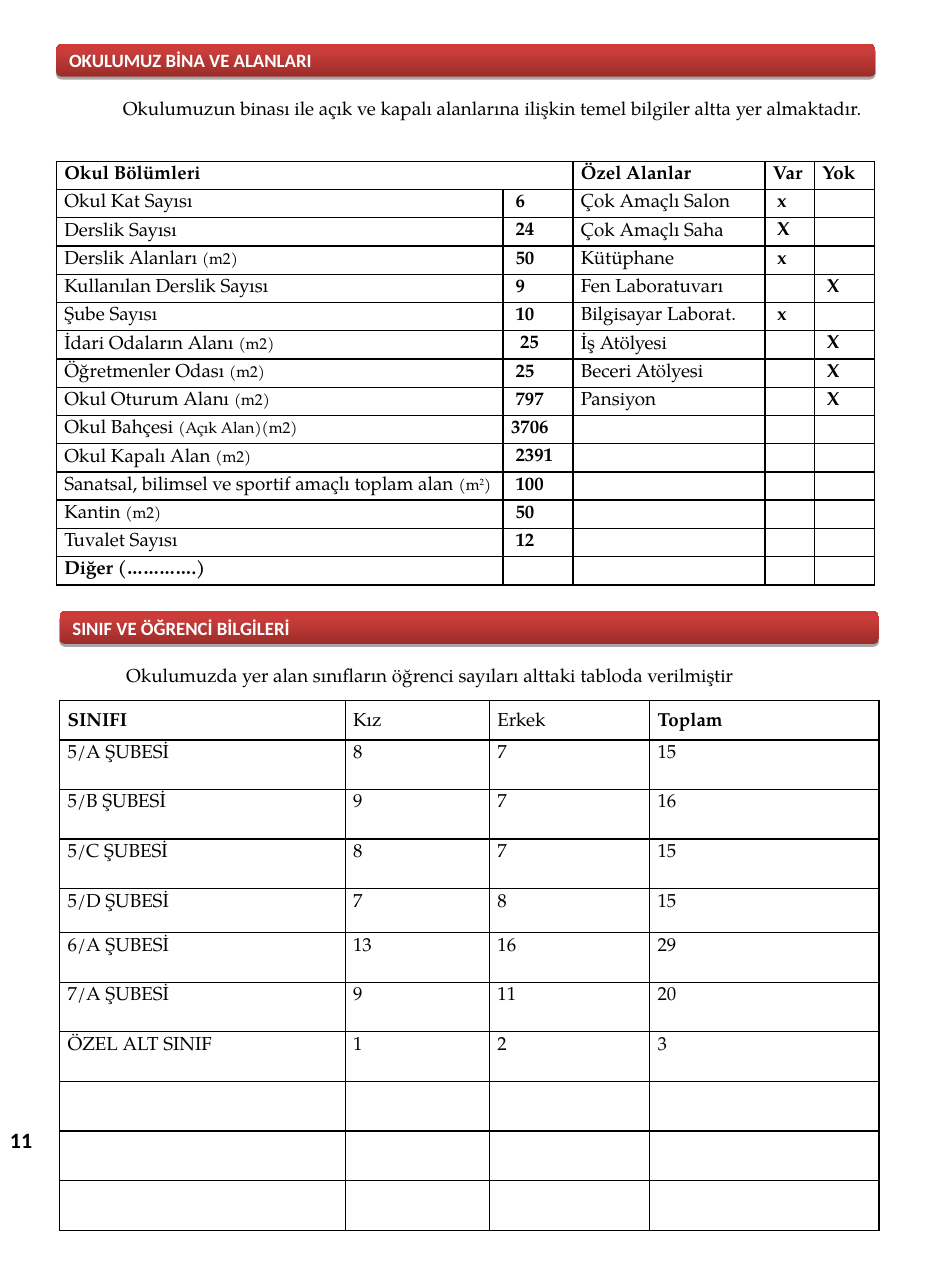
from dataclasses import dataclass
from typing import NamedTuple

from lxml import etree
from pptx import Presentation
from pptx.dml.color import RGBColor
from pptx.enum.shapes import MSO_SHAPE
from pptx.enum.text import MSO_ANCHOR, MSO_AUTO_SIZE, PP_ALIGN
from pptx.oxml import parse_xml
from pptx.oxml.ns import nsdecls, qn
from pptx.slide import Slide
from pptx.table import _Cell
from pptx.text.text import TextFrame, _Paragraph
from pptx.util import Inches, Pt

BLACK = RGBColor(0x00, 0x00, 0x00)
WHITE = RGBColor(0xFF, 0xFF, 0xFF)
BAR_STOPS = (
    (0, RGBColor(0x9B, 0x2D, 0x2A)),
    (80, RGBColor(0xCB, 0x3D, 0x3A)),
    (100, RGBColor(0xCE, 0x3B, 0x37)),
)
SERIF = "TeX Gyre Pagella"
SANS = "Calibri"
JUSTIFY, LEFT = PP_ALIGN.JUSTIFY, PP_ALIGN.LEFT
MIDDLE, TOP = MSO_ANCHOR.MIDDLE, MSO_ANCHOR.TOP
GROW = MSO_AUTO_SIZE.SHAPE_TO_FIT_TEXT
ROUNDED = MSO_SHAPE.ROUNDED_RECTANGLE

CONTENT_WIDTH = 7.26
CELL_INSET = 0.07
VALUE_INDENT = 0.04
LINE_SPACING = 1.25


class Piece(NamedTuple):
    text: str
    size: float = 12
    bold: bool = False
    font: str = SERIF
    color: RGBColor = BLACK
    raised: bool = False


@dataclass(frozen=True)
class Entry:
    """Content of one table cell."""
    pieces: tuple[Piece, ...] = ()
    indent: float = 0
    anchor: MSO_ANCHOR = TOP


@dataclass(frozen=True)
class Grid:
    left: float
    top: float
    columns: tuple[float, ...]
    rows: tuple[float, ...]
    entries: list[list[Entry]]
    right_border: float = 1


@dataclass(frozen=True)
class Section:
    left: float
    bar_top: float
    title: str
    intro_top: float
    intro_height: float
    intro: str


EMPTY = Entry()
SQUARE_METRES = (Piece("(m2)", 10),)
RAISED_METRES = (Piece("(m", 10), Piece("2", 10, raised=True), Piece(")", 10))

SECTIONS = (
    Section(0.5, 0.39, "OKULUMUZ BİNA VE ALANLARI", 0.76, 0.59,
            "Okulumuzun binası ile açık ve kapalı alanlarına ilişkin temel bilgiler altta yer almaktadır."),
    Section(0.53, 5.42, "SINIF VE ÖĞRENCİ BİLGİLERİ", 5.79, 0.34,
            "Okulumuzda yer alan sınıfların öğrenci sayıları alttaki tabloda verilmiştir"),
)

# Part of the school, unit, value, value indent
SCHOOL_PARTS = (
    ("Okul Kat Sayısı", (), "6", VALUE_INDENT),
    ("Derslik Sayısı", (), "24", VALUE_INDENT),
    ("Derslik Alanları ", SQUARE_METRES, "50", VALUE_INDENT),
    ("Kullanılan Derslik Sayısı", (), "9", VALUE_INDENT),
    ("Şube Sayısı", (), "10", VALUE_INDENT),
    ("İdari Odaların Alanı ", SQUARE_METRES, "25", 2 * VALUE_INDENT),
    ("Öğretmenler Odası ", SQUARE_METRES, "25", VALUE_INDENT),
    ("Okul Oturum Alanı ", SQUARE_METRES, "797", VALUE_INDENT),
    ("Okul Bahçesi ", (Piece("(Açık Alan)(m2)", 10),), "3706", 0),
    ("Okul Kapalı Alan ", SQUARE_METRES, "2391", VALUE_INDENT),
    ("Sanatsal, bilimsel ve sportif amaçlı toplam alan ", RAISED_METRES, "100", VALUE_INDENT),
    ("Kantin ", SQUARE_METRES, "50", VALUE_INDENT),
    ("Tuvalet Sayısı", (), "12", VALUE_INDENT),
)
# Special area, mark under "Var", mark under "Yok"
SPECIAL_AREAS = (
    ("Çok Amaçlı Salon", "x", ""),
    ("Çok Amaçlı Saha", "X", ""),
    ("Kütüphane", "x", ""),
    ("Fen Laboratuvarı", "", "X"),
    ("Bilgisayar Laborat.", "x", ""),
    ("İş Atölyesi", "", "X"),
    ("Beceri Atölyesi", "", "X"),
    ("Pansiyon", "", "X"),
)
# Class, girls, boys, total
CLASSES = (
    ("5/A ŞUBESİ", "8", "7", "15"),
    ("5/B ŞUBESİ", "9", "7", "16"),
    ("5/C ŞUBESİ", "8", "7", "15"),
    ("5/D ŞUBESİ", "7", "8", "15"),
    ("6/A ŞUBESİ", "13", "16", "29"),
    ("7/A ŞUBESİ", "9", "11", "20"),
    ("ÖZEL ALT SINIF", "1", "2", "3"),
)
SPARE_CLASS_ROWS = 3


def plain(text: str) -> Entry:
    return Entry((Piece(text),))


def strong(text: str, indent: float = 0) -> Entry:
    return Entry((Piece(text, bold=True),), indent) if text else EMPTY


def building_entries() -> list[list[Entry]]:
    rows = [[strong("Okul Bölümleri"), EMPTY, strong("Özel Alanlar"), strong("Var"), strong("Yok")]]
    for index, (part, unit, value, indent) in enumerate(SCHOOL_PARTS):
        row = [Entry((Piece(part), *unit)), strong(value, indent)]
        if index < len(SPECIAL_AREAS):
            area, present, absent = SPECIAL_AREAS[index]
            row += [plain(area), strong(present, VALUE_INDENT), strong(absent, VALUE_INDENT)]
        else:
            row += [EMPTY] * 3
        rows.append(row)
    return rows + [[strong("Diğer (………….)")] + [EMPTY] * 4]


def class_entries() -> list[list[Entry]]:
    headings = [Entry((Piece(text, bold=bold),), anchor=MIDDLE) for text, bold in
                (("SINIFI", True), ("Kız", False), ("Erkek", False), ("Toplam", True))]
    counts = [[plain(text) for text in row] for row in CLASSES]
    return [headings] + counts + [[EMPTY] * 4] * SPARE_CLASS_ROWS


def add_pieces(paragraph: _Paragraph, pieces: tuple[Piece, ...]) -> None:
    for piece in pieces:
        run = paragraph.add_run()
        run.text = piece.text
        run.font.size = Pt(piece.size)
        run.font.bold = piece.bold
        run.font.name = piece.font
        run.font.color.rgb = piece.color
        if piece.raised:
            run.font._element.set("baseline", "30000")


def add_text(slide: Slide, left: float, top: float, width: float, height: float, piece: Piece) -> TextFrame:
    frame = slide.shapes.add_textbox(Inches(left), Inches(top), Inches(width), Inches(height)).text_frame
    frame.word_wrap = True
    frame.auto_size = GROW
    add_pieces(frame.paragraphs[0], (piece,))
    return frame


def add_section(slide: Slide, section: Section) -> None:
    bar = slide.shapes.add_shape(ROUNDED, Inches(section.left), Inches(section.bar_top),
                                 Inches(CONTENT_WIDTH), Inches(0.29))
    bar.line.fill.background()
    stops = "".join(f'<a:gs pos="{pos * 1000}"><a:srgbClr val="{color}"/></a:gs>' for pos, color in BAR_STOPS)
    bar.fill.background()
    properties = bar._element.spPr
    properties.replace(properties.find(qn("a:noFill")), parse_xml(
        f'<a:gradFill {nsdecls("a")} rotWithShape="1"><a:gsLst>{stops}</a:gsLst>'
        '<a:lin ang="16200000" scaled="0"/></a:gradFill>'))
    properties.append(parse_xml(
        f'<a:effectLst {nsdecls("a")}><a:outerShdw blurRad="0" dist="{Pt(1.8)}" dir="5400000" rotWithShape="0">'
        f'<a:srgbClr val="{BLACK}"><a:alpha val="35000"/></a:srgbClr></a:outerShdw></a:effectLst>'))
    bar.text_frame.vertical_anchor = MIDDLE
    title = bar.text_frame.paragraphs[0]
    title.alignment = LEFT
    add_pieces(title, (Piece(section.title, bold=True, font=SANS, color=WHITE),))

    intro = add_text(slide, section.left, section.intro_top, CONTENT_WIDTH, section.intro_height,
                     Piece(section.intro)).paragraphs[0]
    intro.alignment = JUSTIFY
    intro.line_spacing = LINE_SPACING
    intro._p.get_or_add_pPr().set("indent", str(Inches(0.49)))


def fill_cell(cell: _Cell, entry: Entry, right_border: float) -> None:
    cell.margin_left = Inches(CELL_INSET + entry.indent)
    cell.margin_right = Inches(CELL_INSET)
    cell.margin_top = cell.margin_bottom = 0
    cell.vertical_anchor = entry.anchor
    for side, width in (("L", 1), ("R", right_border), ("T", 1), ("B", 1)):
        cell._tc.get_or_add_tcPr().append(parse_xml(
            f'<a:ln{side} {nsdecls("a")} w="{Pt(width)}"><a:solidFill><a:srgbClr val="{BLACK}"/>'
            f'</a:solidFill></a:ln{side}>'))
    cell.fill.background()
    paragraph = cell.text_frame.paragraphs[0]
    paragraph.alignment = JUSTIFY
    paragraph.line_spacing = LINE_SPACING
    add_pieces(paragraph, entry.pieces)
    if not entry.pieces:
        etree.SubElement(paragraph._p, qn("a:endParaRPr"), sz="1000")


def add_grid(slide: Slide, grid: Grid) -> None:
    table = slide.shapes.add_table(len(grid.rows), len(grid.columns), Inches(grid.left), Inches(grid.top),
                                   Inches(sum(grid.columns)), Inches(sum(grid.rows))).table
    table.first_row = table.horz_banding = False
    for column, width in zip(table.columns, grid.columns):
        column.width = Inches(width)
    for row, height, entries in zip(table.rows, grid.rows, grid.entries):
        row.height = Inches(height)
        for index, (cell, entry) in enumerate(zip(row.cells, entries)):
            fill_cell(cell, entry, grid.right_border if index == len(entries) - 1 else 1)
    if grid.entries[0][1] == EMPTY:
        table.cell(0, 0).merge(table.cell(0, 1))


def main() -> None:
    deck = Presentation()
    deck.slide_width, deck.slide_height = Inches(8.27), Inches(11.42)
    slide = deck.slides.add_slide(deck.slide_layouts[6])
    for section in SECTIONS:
        add_section(slide, section)
    add_grid(slide, Grid(0.5, 1.43, (3.96, 0.62, 1.7, 0.44, 0.53), (0.25,) * 15, building_entries()))
    class_rows = (0.35,) + (0.44,) * 3 + (0.39,) + (0.44,) * 6
    add_grid(slide, Grid(0.53, 6.21, (2.53, 1.28, 1.42, 2.03), class_rows, class_entries(), 1.5))
    add_text(slide, -0.01, 9.94, 0.51, 0.34, Piece("11", 14, True, SANS))
    deck.save("out.pptx")


if __name__ == "__main__":
    main()
